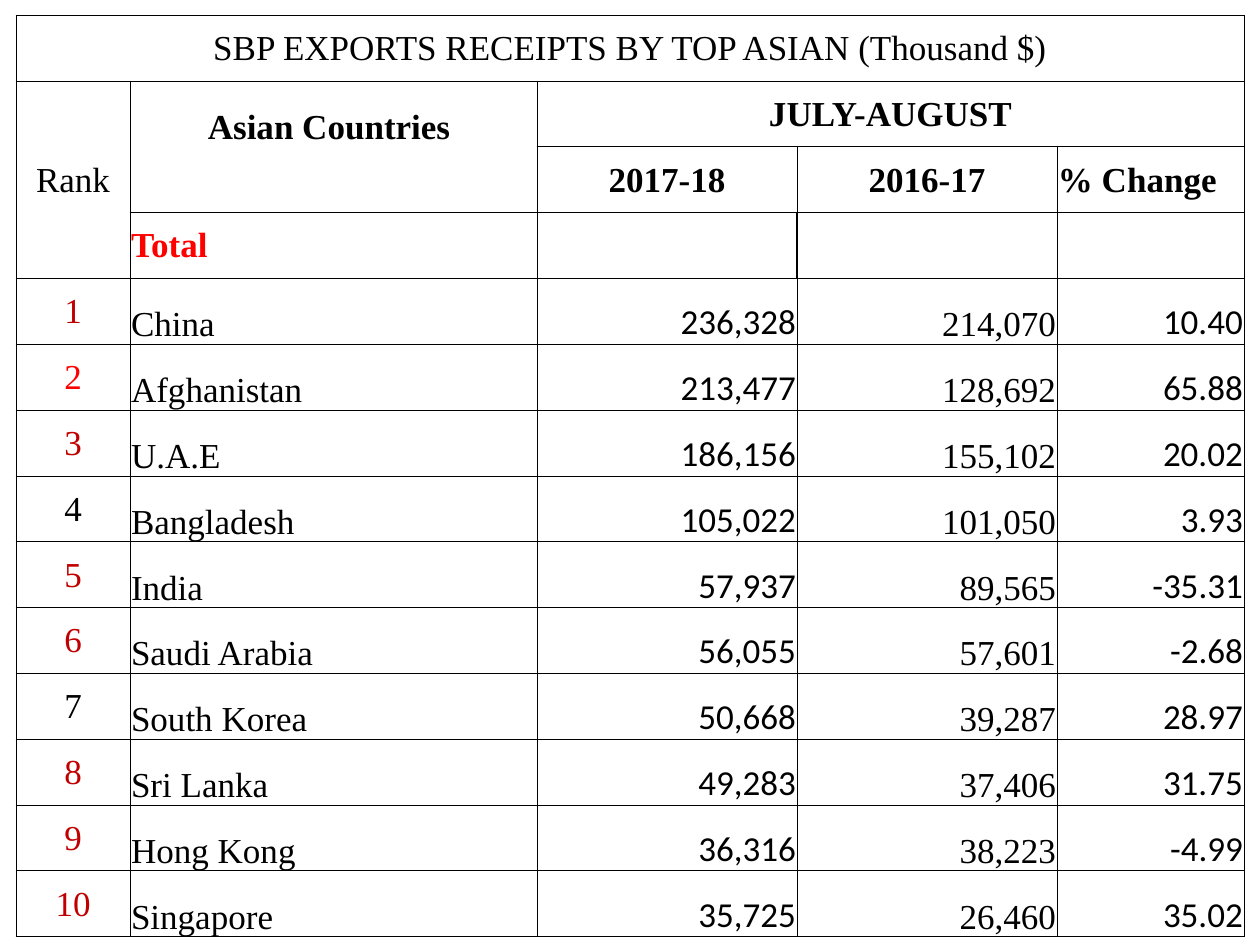
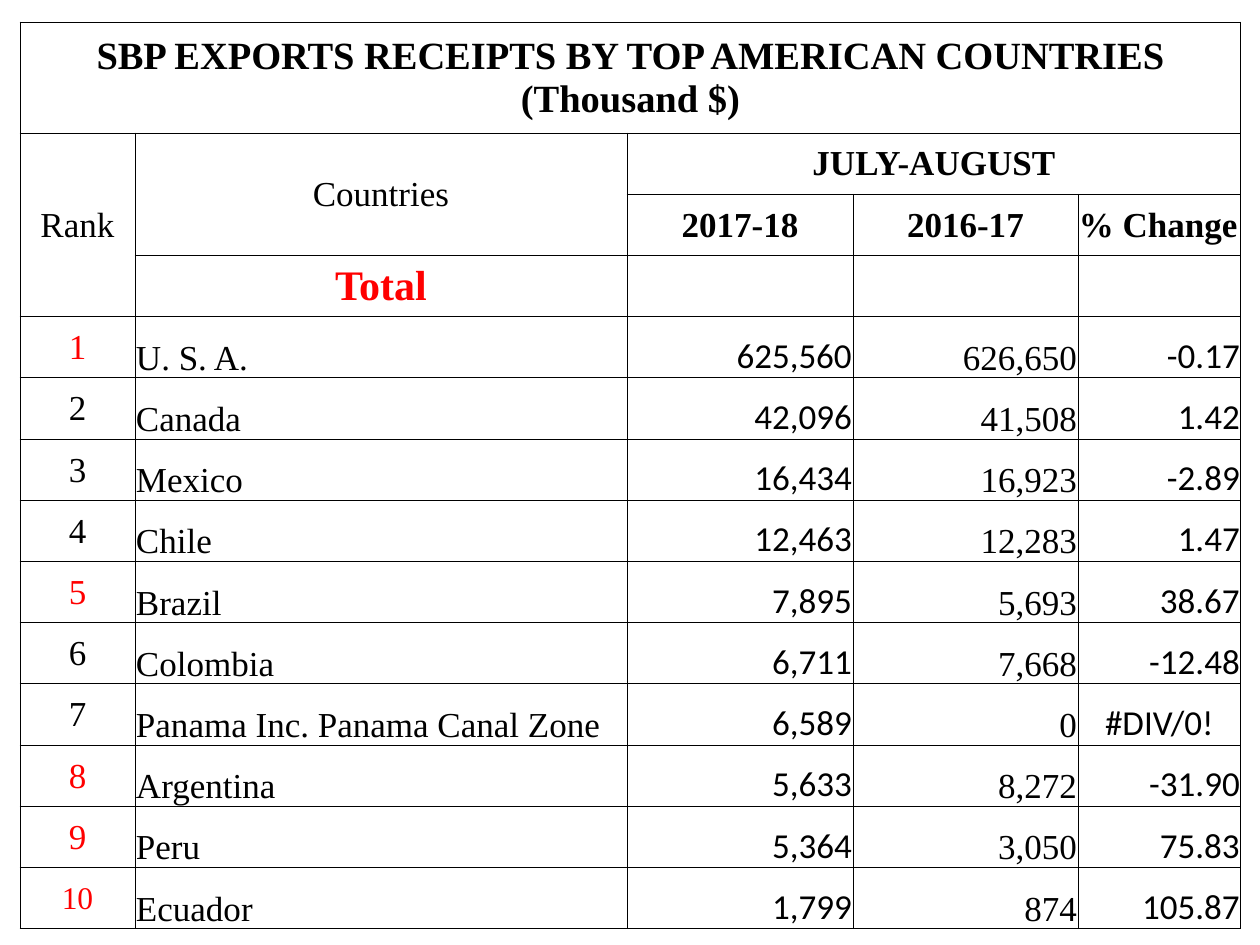
from pptx import Presentation
from pptx.dml.color import RGBColor
from pptx.enum.text import MSO_ANCHOR, PP_ALIGN
from pptx.oxml import parse_xml
from pptx.oxml.ns import nsdecls, qn
from pptx.util import Pt

LEFT, CENTER, RIGHT = PP_ALIGN.LEFT, PP_ALIGN.CENTER, PP_ALIGN.RIGHT
MIDDLE, BOTTOM = MSO_ANCHOR.MIDDLE, MSO_ANCHOR.BOTTOM
EMU_PER_PX = 914400 / 126
SERIF, SANS = "Times New Roman", "Calibri"
BLACK, RED, DARK_RED = "000000", "FF0000", "C00000"
THIN, THICK = Pt(0.5), Pt(1)
TOTAL_ROW, FIRST_COUNTRY_ROW, ROW_COUNT = 3, 4, 14
COUNTRY_COLUMNS = [(CENTER, MIDDLE, SERIF), (LEFT, BOTTOM, SERIF), (RIGHT, BOTTOM, SANS),
                   (RIGHT, BOTTOM, SERIF), (RIGHT, BOTTOM, SANS)]

REPORTS = [
    {
        "title": ("SBP EXPORTS RECEIPTS BY TOP ASIAN (Thousand $)", {}),
        "countries": ("Asian Countries ", {"bold": True}),
        "countries_bottom": 40,
        "total": (LEFT, {"size": Pt(20)}),
        "place": (16, 15, 1228, 922),
        "title_height": 66,
        "columns": [114, 407, 260, 260, 187],
        "total_divider": THICK,
        "rank_colors": [DARK_RED, RED, DARK_RED, BLACK, DARK_RED,
                        DARK_RED, BLACK, DARK_RED, DARK_RED, DARK_RED],
        "last_rank_size": Pt(20),
        "rows": [
            ("China", "236,328", "214,070", "10.40"),
            ("Afghanistan", "213,477", "128,692", "65.88"),
            ("U.A.E", "186,156", "155,102", "20.02"),
            ("Bangladesh", "105,022", "101,050", "3.93"),
            ("India", "57,937", "89,565", "-35.31"),
            ("Saudi Arabia", "56,055", "57,601", "-2.68"),
            ("South Korea", "50,668", "39,287", "28.97"),
            ("Sri Lanka", "49,283", "37,406", "31.75"),
            ("Hong Kong", "36,316", "38,223", "-4.99"),
            ("Singapore", "35,725", "26,460", "35.02"),
        ],
    },
    {
        "title": ("SBP EXPORTS RECEIPTS BY TOP AMERICAN COUNTRIES (Thousand $)",
                  {"size": Pt(22), "bold": True}),
        "countries": ("Countries", {}),
        "countries_bottom": 0,
        "total": (CENTER, {"size": Pt(24)}),
        "place": (20, 22, 1221, 907),
        "title_height": 111,
        "columns": [115, 492, 226, 225, 163],
        "total_divider": THIN,
        "rank_colors": [RED, BLACK, BLACK, BLACK, RED, BLACK, BLACK, RED, RED, RED],
        "last_rank_size": Pt(18),
        "rows": [
            ("U. S. A.", "625,560", "626,650", "-0.17"),
            ("Canada", "42,096", "41,508", "1.42"),
            ("Mexico", "16,434", "16,923", "-2.89"),
            ("Chile", "12,463", "12,283", "1.47"),
            ("Brazil", "7,895", "5,693", "38.67"),
            ("Colombia", "6,711", "7,668", "-12.48"),
            ("Panama Inc. Panama Canal Zone", "6,589", "0", "#DIV/0!"),
            ("Argentina", "5,633", "8,272", "-31.90"),
            ("Peru", "5,364", "3,050", "75.83"),
            ("Ecuador", "1,799", "874", "105.87"),
        ],
    },
]


def px(length):
    return round(length * EMU_PER_PX)


def write(cell, text, align=CENTER, anchor=MIDDLE, color=BLACK, **font_format):
    cell.vertical_anchor = anchor
    paragraph = cell.text_frame.paragraphs[0]
    paragraph.alignment = align
    run = paragraph.add_run()
    run.text = text
    run.font.color.rgb = RGBColor.from_string(color)
    values = {"name": SERIF, "size": Pt(20), "bold": False, **font_format}
    for attribute, value in values.items():
        setattr(run.font, attribute, value)


presentation = Presentation()
presentation.slide_width, presentation.slide_height = px(1260), px(945)

for report in REPORTS:
    slide = presentation.slides.add_slide(presentation.slide_layouts[6])
    place = [px(length) for length in report["place"]]
    table = slide.shapes.add_table(ROW_COUNT, len(report["columns"]), *place).table
    table.first_row = table.horz_banding = False
    for column, width in zip(table.columns, report["columns"]):
        column.width = px(width)
    row_height = (report["place"][3] - report["title_height"]) / (ROW_COUNT - 1)
    for row in table.rows:
        row.height = px(row_height)
    table.rows[0].height = px(report["title_height"])

    for cell in table.iter_cells():
        cell.margin_left = cell.margin_right = cell.margin_top = px(1)
        cell.margin_bottom = 0
        properties = cell._tc.get_or_add_tcPr()
        for side in ("lnL", "lnR", "lnT", "lnB"):
            properties.append(parse_xml(
                f'<a:{side} {nsdecls("a")} w="{THIN}"><a:solidFill>'
                f'<a:srgbClr val="{BLACK}"/></a:solidFill></a:{side}>'))
        cell.fill.background()
    for column_index, side in ((2, "a:lnR"), (3, "a:lnL")):
        border = table.cell(TOTAL_ROW, column_index)._tc.tcPr.find(qn(side))
        border.set("w", str(report["total_divider"]))

    for first, last in (((0, 0), (0, 4)), ((1, 0), (3, 0)), ((1, 1), (2, 1)), ((1, 2), (1, 4))):
        table.cell(*first).merge(table.cell(*last))

    title, title_format = report["title"]
    write(table.cell(0, 0), title, **title_format)
    write(table.cell(1, 0), "Rank")
    countries, countries_format = report["countries"]
    write(table.cell(1, 1), countries, **countries_format)
    table.cell(1, 1).margin_bottom = px(report["countries_bottom"])
    write(table.cell(1, 2), "JULY-AUGUST", bold=True)
    write(table.cell(2, 2), "2017-18", bold=True)
    write(table.cell(2, 3), "2016-17", bold=True)
    write(table.cell(2, 4), "% Change", LEFT, bold=True)
    total_align, total_format = report["total"]
    write(table.cell(TOTAL_ROW, 1), "Total", total_align, color=RED, bold=True, **total_format)

    for rank, (values, rank_color) in enumerate(zip(report["rows"], report["rank_colors"]), 1):
        row_index = FIRST_COUNTRY_ROW + rank - 1
        for column_index, text in enumerate((str(rank), *values)):
            align, anchor, font_name = COUNTRY_COLUMNS[column_index]
            is_rank = column_index == 0
            write(table.cell(row_index, column_index), text,
                  CENTER if text.startswith("#") else align, anchor,
                  rank_color if is_rank else BLACK, name=font_name,
                  size=report["last_rank_size"] if is_rank and rank == 10 else Pt(20))

presentation.save("out.pptx")
